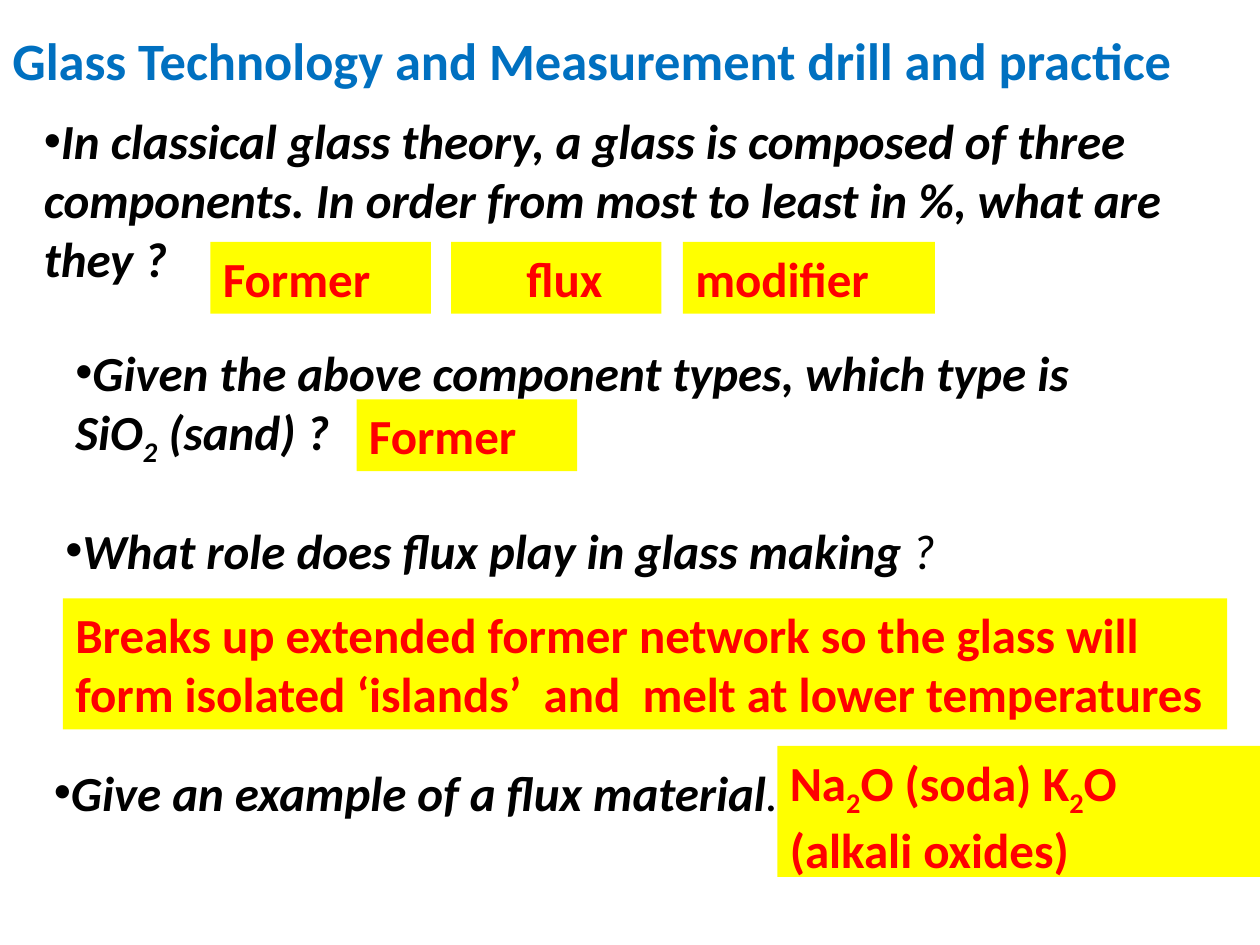
import pptx
import pptx.util
import pptx.dml.color
import pptx.enum.shapes
import pptx.enum.text
import lxml.etree
from pptx.oxml.ns import qn

Inch = pptx.util.Inches

TITLE = ("Glass Technology and Measurement drill and practice", (0, 0.17, 10, 0.61))

ASKS = [
    ([("In classical glass theory, a glass is composed of three components. "
       "In order from most to least in %, what are they ?", {})], (0.25, 0.83, 9.5, 1.51)),
    ([("Given the above component types, which type is SiO", {}), ("2", {"sub": True}),
      (" (sand) ?", {})], (0.5, 2.67, 8.42, 1.04)),
    ([("What role does flux play in glass making ", {}), ("?", {"bold": False})],
     (0.42, 4.08, 8.92, 0.57)),
    ([("Give an example of a flux material", {}), (".", {"bold": False})],
     (0.33, 6, 8.17, 0.57)),
]

REPLIES = [
    ([[("Former", {})]], (1.67, 1.92, 1.75, 0.57), {}),
    ([[("flux", {})]], (3.58, 1.92, 1.67, 0.57), {"level": 1}),
    ([[("modifier", {})]], (5.42, 1.92, 2, 0.57), {}),
    ([[("Former", {})]], (2.83, 3.17, 1.75, 0.57), {}),
    ([[("Breaks up extended former network so the glass will", {})],
      [("form isolated ‘islands’  and  melt at lower temperatures", {})]],
     (0.5, 4.75, 9.24, 1.04), {"wrap": False}),
    ([[("Na", {}), ("2", {"sub": True}), ("O (soda) K", {}), ("2", {"sub": True}),
       ("O (alkali oxides)", {})]], (6.17, 5.92, 3.83, 1.04), {}),
]

HEAD = {"size": 30, "bold": True, "color": "0070C0"}
ASK = {"size": 28, "bold": True, "italic": True, "color": "000000"}
REPLY = {"size": 28, "bold": True, "color": "FF0000"}


def tint(code):
    return pptx.dml.color.RGBColor.from_string(code)


def style(run, form):
    font = run.font
    font.name = "Calibri"
    for key, val in form.items():
        if key == "color":
            font.color.rgb = tint(val)
        elif key == "size":
            font.size = pptx.util.Pt(val)
        elif key == "sub":
            font._element.set("baseline", "-25000")
        else:
            setattr(font, key, val)


def dot(para):
    prop = para._p.get_or_add_pPr()
    lxml.etree.SubElement(prop, qn("a:buFont")).set("typeface", "Arial")
    lxml.etree.SubElement(prop, qn("a:buChar")).set("char", "•")


def write(shape, lines, form, wrap=True, level=0, mark=False):
    frame = shape.text_frame
    frame.word_wrap = wrap
    frame.auto_size = pptx.enum.text.MSO_AUTO_SIZE.SHAPE_TO_FIT_TEXT
    frame.vertical_anchor = pptx.enum.text.MSO_ANCHOR.TOP
    for num, line in enumerate(lines):
        para = frame.add_paragraph() if num else frame.paragraphs[0]
        para.alignment = pptx.enum.text.PP_ALIGN.LEFT
        if level:
            para.level = level
            para._p.get_or_add_pPr().set("marL", str(Inch(0.5 * level)))
        if mark:
            dot(para)
        for text, more in line:
            run = para.add_run()
            run.text = text
            style(run, {**form, **more})


def label(slide, lines, box, form, **opts):
    write(slide.shapes.add_textbox(*map(Inch, box)), lines, form, **opts)


def panel(slide, lines, box, opts):
    kind = pptx.enum.shapes.MSO_SHAPE.RECTANGLE
    shape = slide.shapes.add_shape(kind, *map(Inch, box))
    shape.shadow.inherit = False
    shape.fill.solid()
    shape.fill.fore_color.rgb = tint("FFFF00")
    shape.line.fill.background()
    write(shape, lines, REPLY, **opts)


def main():
    deck = pptx.Presentation()
    deck.slide_width, deck.slide_height = Inch(10), Inch(7.5)
    slide = deck.slides.add_slide(deck.slide_layouts[6])
    text, box = TITLE
    label(slide, [[(text, {})]], box, HEAD)
    for line, box in ASKS:
        label(slide, [line], box, ASK, mark=True)
    for lines, box, opts in REPLIES:
        panel(slide, lines, box, opts)
    deck.save("out.pptx")


if __name__ == "__main__":
    main()
